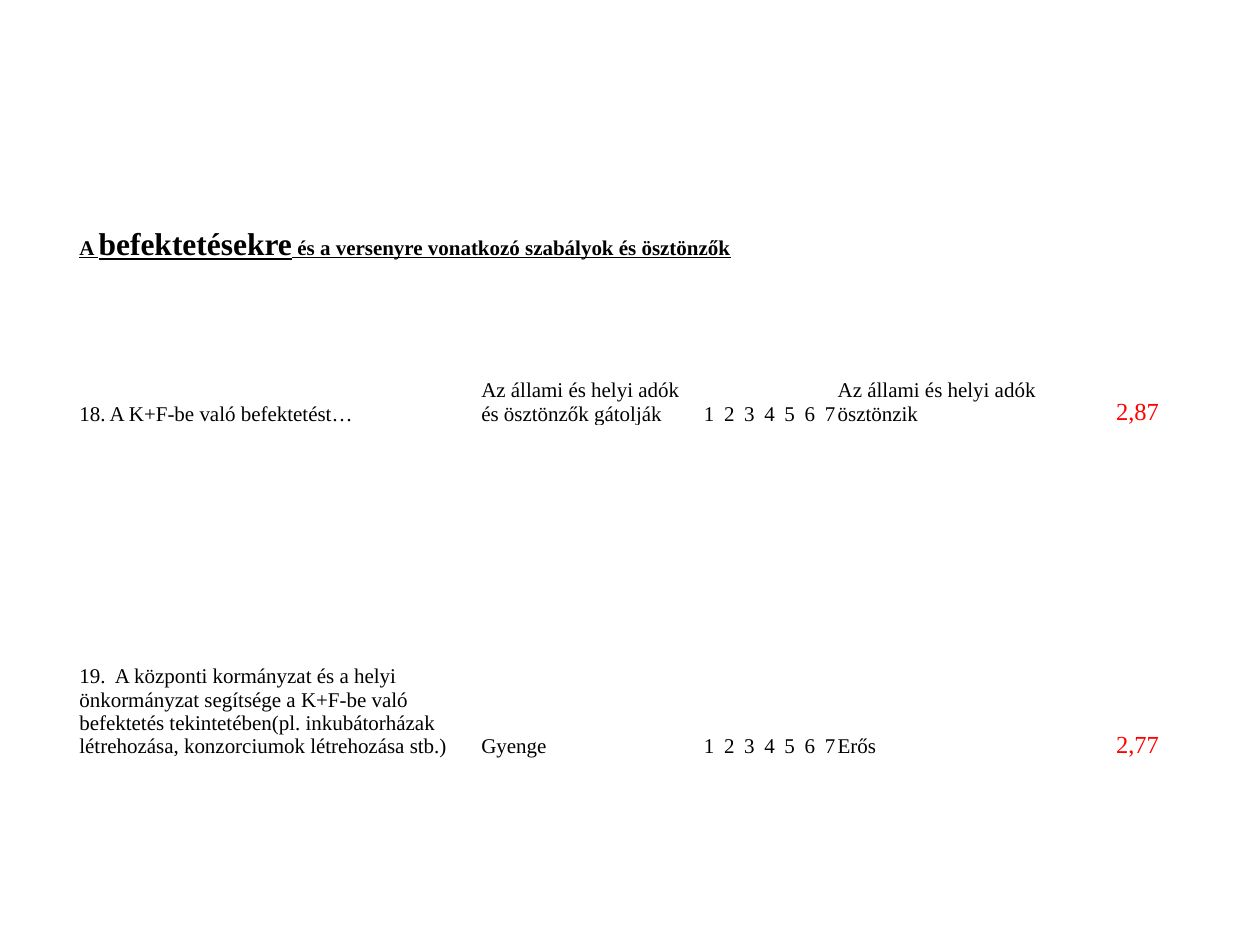
from pptx import Presentation
from pptx.dml.color import RGBColor
from pptx.enum.text import MSO_ANCHOR, PP_ALIGN
from pptx.util import Inches, Pt

BLACK = RGBColor(0x00, 0x00, 0x00)
RED = RGBColor(0xFF, 0x00, 0x00)
FONT = "Times New Roman"

SCALE = [str(grade) for grade in range(1, 8)]
COLUMN_WIDTHS = [3.19, 1.71] + [0.16] * len(SCALE) + [2.01, 0.56]
ROW_HEIGHTS = [1.3, 1.3, 2.64]

HEADING = [
    ("A ", 12),
    ("befektetésekre", 18),
    (" és a versenyre vonatkozó szabályok és ösztönzők", 12),
]
# Question, low end of the scale, high end of the scale, mean score
QUESTIONS = [
    ("18. A K+F-be való befektetést…",
     "Az állami és helyi adók és ösztönzők gátolják",
     "Az állami és helyi adók ösztönzik",
     "2,87"),
    ("19.  A központi kormányzat és a helyi önkormányzat segítsége a K+F-be való "
     "befektetés tekintetében(pl. inkubátorházak létrehozása, konzorciumok "
     "létrehozása stb.)",
     "Gyenge",
     "Erős",
     "2,77"),
]


def format_cell(cell):
    cell.fill.background()
    cell.vertical_anchor = MSO_ANCHOR.BOTTOM
    cell.margin_left = cell.margin_right = cell.margin_top = Inches(0.01)
    cell.margin_bottom = Inches(0)


def write_cell(cell, text, align=PP_ALIGN.LEFT, size=12, color=BLACK):
    para = cell.text_frame.paragraphs[0]
    para.alignment = align
    para.add_run().text = text
    para.font.name = FONT
    para.font.size = Pt(size)
    para.font.color.rgb = color


def write_heading(cell):
    para = cell.text_frame.paragraphs[0]
    for text, size in HEADING:
        span = para.add_run()
        span.text = text
        span.font.name = FONT
        span.font.size = Pt(size)
        span.font.bold = True
        span.font.underline = True
        span.font.color.rgb = BLACK


def write_question(cells, question, low, high, score):
    write_cell(cells[0], question)
    write_cell(cells[1], low)
    for cell, grade in zip(cells[2:-2], SCALE):
        write_cell(cell, grade, PP_ALIGN.RIGHT)
    write_cell(cells[-2], high)
    write_cell(cells[-1], score, PP_ALIGN.RIGHT, 14, RED)


def add_survey_table(page, left, top, width, height):
    frame = page.shapes.add_table(
        len(ROW_HEIGHTS), len(COLUMN_WIDTHS), left, top, width, height)
    table = frame.table
    table.first_row = False
    table.horz_banding = False
    for column, share in zip(table.columns, COLUMN_WIDTHS):
        column.width = int(width * share / sum(COLUMN_WIDTHS))
    for row, share in zip(table.rows, ROW_HEIGHTS):
        row.height = int(height * share / sum(ROW_HEIGHTS))
    for cell in table.iter_cells():
        format_cell(cell)

    last = len(COLUMN_WIDTHS) - 1
    table.cell(0, 0).merge(table.cell(0, last - 1))
    write_heading(table.cell(0, 0))
    for index, question in enumerate(QUESTIONS, start=1):
        write_question(list(table.rows[index].cells), *question)


def main():
    deck = Presentation()
    deck.slide_width = Inches(10)
    deck.slide_height = Inches(7.5)
    page = deck.slides.add_slide(deck.slide_layouts[6])
    add_survey_table(page, Inches(0.62), Inches(0.78), Inches(8.59), Inches(5.24))
    deck.save("out.pptx")


if __name__ == "__main__":
    main()
